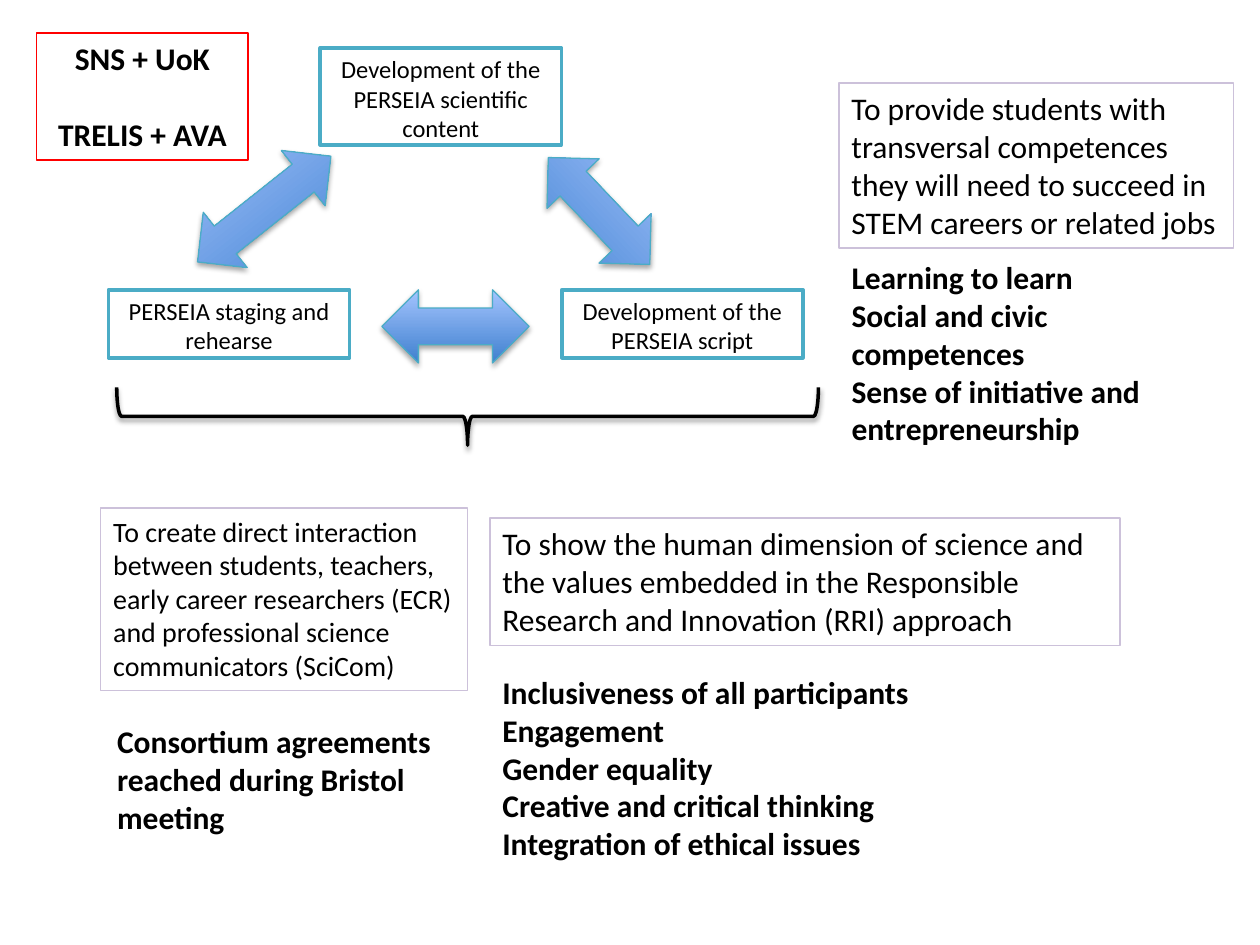
"""Builds the PERSEIA goals and competences slide."""
from dataclasses import dataclass

from lxml import etree
from pptx import Presentation
from pptx import util as u
from pptx.dml.color import RGBColor
from pptx.enum import shapes, text
from pptx.oxml.ns import qn


@dataclass(frozen=True)
class Theme:
    font: str = "Calibri"
    ink: str = "000000"
    paper: str = "FFFFFF"
    teal: str = "4BACC6"
    lilac: str = "CCC1DA"
    red: str = "FF0000"
    deep: str = "3F80CE"
    pale: str = "A4C4FF"
    small: int = 14
    mid: int = 16
    large: int = 18


def rgb(code):
    return RGBColor.from_string(code)


def write(shape, lines, font, size, color, bold=False, align=text.PP_ALIGN.LEFT,
          wrap=True, gap=0):
    frame = shape.text_frame
    frame.word_wrap = wrap
    frame.auto_size = text.MSO_AUTO_SIZE.SHAPE_TO_FIT_TEXT
    frame.vertical_anchor = text.MSO_ANCHOR.TOP
    for i, line in enumerate(lines):
        para = frame.paragraphs[0] if i == 0 else frame.add_paragraph()
        para.alignment = align
        para.space_before = u.Pt(gap if i else 0)
        run = para.add_run()
        run.text = line
        run.font.name = font
        run.font.size = u.Pt(size)
        run.font.bold = bold
        run.font.color.rgb = rgb(color)


class Kit:
    def __init__(self, slide, theme):
        self.slide, self.theme = slide, theme
        self.home = slide.shapes

    def group(self):
        self.home = self.slide.shapes.add_group_shape().shapes

    def ungroup(self):
        self.home = self.slide.shapes

    def shape(self, kind, at, line, width, turn=0):
        item = self.home.add_shape(kind, *map(u.Pt, at))
        item.shadow.inherit = False
        item.fill.background()
        item.line.color.rgb = rgb(line)
        item.line.width = u.Pt(width)
        item.rotation = turn
        return item

    def shade(self, item, drop, alpha):
        effects = item._element.spPr.find(qn("a:effectLst"))
        shadow = etree.SubElement(effects, qn("a:outerShdw"), blurRad=str(u.Pt(3.1)),
                                  dist=str(u.Pt(drop)), dir="5400000", rotWithShape="0")
        tone = etree.SubElement(shadow, qn("a:srgbClr"), val=self.theme.ink)
        etree.SubElement(tone, qn("a:alpha"), val=str(alpha * 1000))

    def box(self, at, lines, line, width, size, fill=None, **form):
        item = self.shape(shapes.MSO_SHAPE.RECTANGLE, at, line, width)
        if fill:
            item.fill.solid()
            item.fill.fore_color.rgb = rgb(fill)
        write(item, lines, self.theme.font, size, self.theme.ink, **form)

    def step(self, at, label):
        t = self.theme
        self.box(at, [label], t.teal, 2, t.small, fill=t.paper, align=text.PP_ALIGN.CENTER)

    def goal(self, at, label, size):
        self.box(at, [label], self.theme.lilac, 0.75, size)

    def note(self, at, lines):
        t = self.theme
        item = self.home.add_textbox(*map(u.Pt, at))
        write(item, lines, t.font, t.large, t.ink, bold=True)

    def arrow(self, at, turn=0):
        t = self.theme
        item = self.shape(shapes.MSO_SHAPE.LEFT_RIGHT_ARROW, at, t.teal, 0.75, turn)
        item.fill.gradient()
        item.fill.gradient_angle = 90
        for stop, color in zip(item.fill.gradient_stops, (t.deep, t.pale)):
            stop.color.rgb = rgb(color)
        self.shade(item, 1.8, 35)

    def brace(self, at, turn):
        item = self.shape(shapes.MSO_SHAPE.RIGHT_BRACE, at, self.theme.ink, 2, turn)
        self.shade(item, 1.6, 38)


def main():
    deck = Presentation()
    deck.slide_width, deck.slide_height = u.Pt(720), u.Pt(540)
    theme = Theme()
    kit = Kit(deck.slides.add_slide(deck.slide_layouts[6]), theme)

    kit.group()
    kit.step((183, 27.4, 137.8, 55.4), "Development of the PERSEIA scientific content")
    kit.step((321, 165.6, 137.8, 38.9), "Development of the PERSEIA script")
    kit.step((62, 165.6, 137.8, 38.9), "PERSEIA staging and rehearse")
    kit.arrow((102.4, 99.3, 97.2, 40.3), 321.6)
    kit.arrow((300.2, 100.1, 84.2, 41), 46.5)
    kit.arrow((218.2, 165.6, 84.2, 41.8))
    kit.ungroup()
    kit.brace((250.6, 37.4, 33.1, 401), 90)

    kit.goal((57.6, 290.2, 209.5, 104.4),
             "To create direct interaction between students, teachers, early career "
             "researchers (ECR) and professional science communicators (SciCom)", theme.mid)
    kit.goal((280, 296, 360, 72.7),
             "To show the human dimension of science and the values embedded in the "
             "Responsible Research and Innovation (RRI) approach", theme.large)
    kit.goal((479.5, 47.5, 225.4, 94.3),
             "To provide students with transversal competences they will need to succeed "
             "in STEM careers or related jobs", theme.large)

    kit.note((280, 381, 336.2, 116.6),
             ["Inclusiveness of all participants", "Engagement", "Gender equality",
              "Creative and critical thinking", "Integration of ethical issues"])
    kit.note((479.5, 144, 219.6, 116.6),
             ["Learning to learn", "Social and civic competences",
              "Sense of initiative and entrepreneurship"])
    kit.box((20.9, 18.7, 121, 72.7), ["SNS + UoK", "TRELIS + AVA"], theme.red, 1,
            theme.large, bold=True, align=text.PP_ALIGN.CENTER, wrap=False, gap=21.6)
    kit.note((59.8, 409, 200.2, 72.7),
             ["Consortium agreements reached during Bristol meeting"])
    deck.save("out.pptx")


if __name__ == "__main__":
    main()
